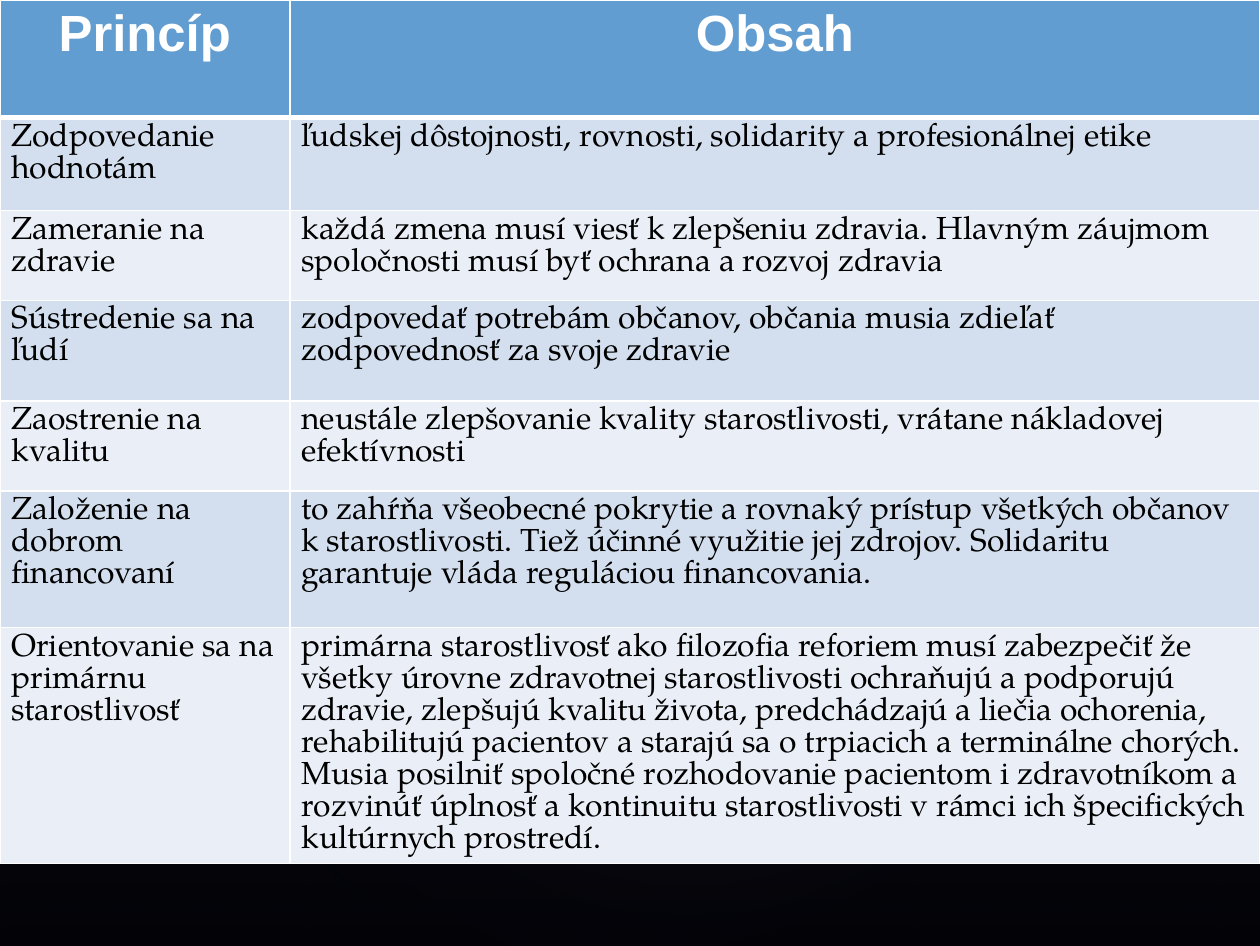
"""Build a slide with a table of health care reform principles."""
from dataclasses import dataclass

from lxml.etree import SubElement
from pptx import Presentation
from pptx.dml.color import RGBColor
from pptx.enum.shapes import MSO_SHAPE
from pptx.enum.text import PP_ALIGN
from pptx.oxml.ns import qn
from pptx.util import Pt

HEADINGS = ("Princíp", "Obsah")
PRINCIPLES = [
    ("Zodpovedanie hodnotám",
     "ľudskej dôstojnosti, rovnosti, solidarity a profesionálnej etike"),
    ("Zameranie na zdravie",
     "každá zmena musí viesť k zlepšeniu zdravia. Hlavným záujmom "
     "spoločnosti musí byť ochrana a rozvoj zdravia"),
    ("Sústredenie sa na ľudí",
     "zodpovedať potrebám občanov, občania musia zdieľať "
     "zodpovednosť za svoje zdravie"),
    ("Zaostrenie na kvalitu",
     "neustále zlepšovanie kvality starostlivosti, vrátane nákladovej "
     "efektívnosti"),
    ("Založenie na dobrom financovaní",
     "to zahŕňa všeobecné pokrytie a rovnaký prístup všetkých občanov "
     "k starostlivosti. Tiež účinné využitie jej zdrojov. Solidaritu "
     "garantuje vláda reguláciou financovania."),
    ("Orientovanie sa na primárnu starostlivosť",
     "primárna starostlivosť ako filozofia reforiem musí zabezpečiť že "
     "všetky úrovne zdravotnej starostlivosti ochraňujú a podporujú "
     "zdravie, zlepšujú kvalitu života, predchádzajú a liečia ochorenia, "
     "rehabilitujú pacientov a starajú sa o trpiacich a terminálne chorých. "
     "Musia posilniť spoločné rozhodovanie pacientom i zdravotníkom a "
     "rozvinúť úplnosť a kontinuitu starostlivosti v rámci ich špecifických "
     "kultúrnych prostredí."),
]
SLIDE_WIDTH, SLIDE_HEIGHT = 793.44, 595.44
PRINCIPLE_WIDTH = 182.6
ROW_HEIGHTS = (74, 58.5, 56.5, 63.5, 56.5, 86, 148.5)
GLOWS = [
    ((118.8, 90, 628.56, 495.36), 328.7, 7),
    ((-23.76, 101.52, 480.96, 388.8), 294.3, 8),
    ((284.4, 10.08, 562.32, 412.56), 328.7, 8),
]


@dataclass(frozen=True)
class Theme:
    background: str = "000000"
    haze_stops: tuple = ((0, "504652", 36), (100, "242852", 10))
    glow_inner: str = "C4BCC6"
    glow_outer: str = "242852"
    header_fill: str = "629DD1"
    bands: tuple = ("D3DFEE", "EAEFF7")
    border: str = "FFFFFF"
    header_text: str = "FFFFFF"
    body_text: str = "000000"
    header_font: str = "Arial"
    body_font: str = "TeX Gyre Pagella"
    header_size: float = 32
    body_size: float = 20
    line_spacing: float = 1.0
    thin: float = 1
    thick: float = 3


THEME = Theme()


def add_gradient_shape(slide, kind, frame, stops, rotation=0):
    shape = slide.shapes.add_shape(kind, *map(Pt, frame))
    shape.rotation = rotation
    shape.shadow.inherit = False
    shape.line.fill.background()
    shape.fill.gradient()
    gradient = shape._element.spPr.find(qn("a:gradFill"))
    for child in list(gradient):
        gradient.remove(child)
    stop_list = SubElement(gradient, qn("a:gsLst"))
    for position, color, opacity in stops:
        stop = SubElement(stop_list, qn("a:gs"), pos=str(position * 1000))
        rgb = SubElement(stop, qn("a:srgbClr"), val=color)
        SubElement(rgb, qn("a:alpha"), val=str(opacity * 1000))
    if kind == MSO_SHAPE.OVAL:
        circle = SubElement(gradient, qn("a:path"), path="circle")
        center = dict.fromkeys("ltrb", "50000")
        SubElement(circle, qn("a:fillToRect"), center)
    else:
        SubElement(gradient, qn("a:lin"), ang="5400000", scaled="0")


def add_backdrop(slide):
    slide.background.fill.solid()
    slide.background.fill.fore_color.rgb = RGBColor.from_string(THEME.background)
    add_gradient_shape(slide, MSO_SHAPE.RECTANGLE,
                       (0, 0, SLIDE_WIDTH, SLIDE_HEIGHT), THEME.haze_stops)
    for frame, rotation, opacity in GLOWS:
        stops = ((0, THEME.glow_inner, opacity), (58, THEME.glow_outer, 0))
        add_gradient_shape(slide, MSO_SHAPE.OVAL, frame, stops, rotation)


def add_borders(cell, top, bottom):
    properties = cell._tc.get_or_add_tcPr()
    widths = {"L": THEME.thin, "R": THEME.thin, "T": top, "B": bottom}
    for side, width in widths.items():
        line = SubElement(properties, qn(f"a:ln{side}"), w=str(Pt(width)))
        fill = SubElement(line, qn("a:solidFill"))
        SubElement(fill, qn("a:srgbClr"), val=THEME.border)


def fill_cell(cell, text, row_index):
    is_header = row_index == 0
    add_borders(cell,
                THEME.thick if row_index == 1 else THEME.thin,
                THEME.thick if is_header else THEME.thin)
    color = THEME.header_fill if is_header else THEME.bands[(row_index - 1) % 2]
    cell.fill.solid()
    cell.fill.fore_color.rgb = RGBColor.from_string(color)
    cell.text = text
    paragraph = cell.text_frame.paragraphs[0]
    paragraph.alignment = PP_ALIGN.CENTER if is_header else PP_ALIGN.LEFT
    paragraph.line_spacing = THEME.line_spacing
    font = paragraph.font
    font.name = THEME.header_font if is_header else THEME.body_font
    font.size = Pt(THEME.header_size if is_header else THEME.body_size)
    font.bold = is_header
    font.color.rgb = RGBColor.from_string(
        THEME.header_text if is_header else THEME.body_text)


def add_principles_table(slide):
    rows = [HEADINGS, *PRINCIPLES]
    table = slide.shapes.add_table(
        len(rows), len(HEADINGS), Pt(0), Pt(0),
        Pt(SLIDE_WIDTH), Pt(sum(ROW_HEIGHTS))).table
    table.columns[0].width = Pt(PRINCIPLE_WIDTH)
    table.columns[1].width = Pt(SLIDE_WIDTH - PRINCIPLE_WIDTH)
    for row_index, (texts, height) in enumerate(zip(rows, ROW_HEIGHTS)):
        table.rows[row_index].height = Pt(height)
        for column_index, text in enumerate(texts):
            fill_cell(table.cell(row_index, column_index), text, row_index)


def main():
    presentation = Presentation()
    presentation.slide_width = Pt(SLIDE_WIDTH)
    presentation.slide_height = Pt(SLIDE_HEIGHT)
    slide = presentation.slides.add_slide(presentation.slide_layouts[6])
    add_backdrop(slide)
    add_principles_table(slide)
    presentation.save("out.pptx")


if __name__ == "__main__":
    main()
